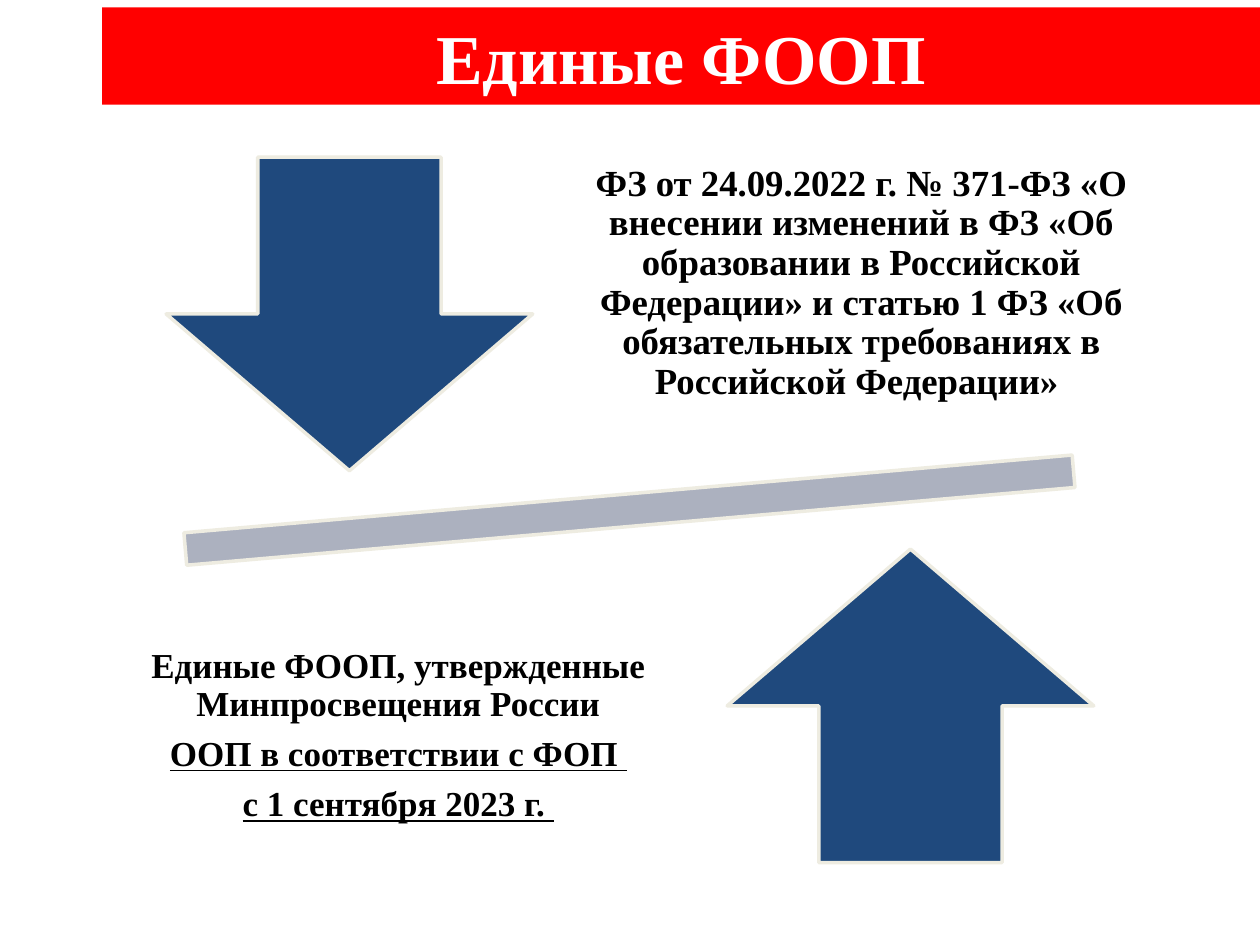
"""Build a slide on the unified programmes with opposing arrows."""
import pptx
import pptx.dml.color
import pptx.enum.shapes
import pptx.enum.text
import pptx.util

Cm = pptx.util.Cm
Pt = pptx.util.Pt
RGBColor = pptx.dml.color.RGBColor
SHAPE = pptx.enum.shapes.MSO_SHAPE
MIDDLE = pptx.enum.text.MSO_ANCHOR.MIDDLE
CENTER = pptx.enum.text.PP_ALIGN.CENTER

RED = RGBColor(0xFF, 0x00, 0x00)
NAVY = RGBColor(0x1F, 0x49, 0x7D)
GREY = RGBColor(0xAC, 0xB1, 0xBF)
CREAM = RGBColor(0xEE, 0xEC, 0xE1)
WHITE = RGBColor(0xFF, 0xFF, 0xFF)
BLACK = RGBColor(0x00, 0x00, 0x00)


def add_shape(kind, box, fill, line=None):
    sp = s.shapes.add_shape(kind, *[Cm(v) for v in box])
    sp.shadow.inherit = False
    sp.fill.solid()
    sp.fill.fore_color.rgb = fill
    if line is None:
        sp.line.fill.background()
    else:
        sp.line.color.rgb = line
        sp.line.width = Pt(2)
    return sp


def format_paragraph(p, size, color):
    p.alignment = CENTER
    for r in p.runs:
        r.font.name = "Times New Roman"
        r.font.size = Pt(size)
        r.font.bold = True
        r.font.color.rgb = color


prs = pptx.Presentation()
prs.slide_width = Cm(25.4)
prs.slide_height = Cm(19.05)
s = prs.slides.add_slide(prs.slide_layouts[6])

title = add_shape(SHAPE.RECTANGLE, (2.06, 0.15, 23.34, 1.96), RED)
title.text_frame.text = "Единые ФООП"
format_paragraph(title.text_frame.paragraphs[0], 40, WHITE)

bar = add_shape(SHAPE.MATH_MINUS, (0.46, 8.89, 24.46, 2.79), GREY, CREAM)
bar.rotation = 355
add_shape(SHAPE.DOWN_ARROW, (3.35, 3.17, 7.39, 6.32), NAVY, CREAM)
add_shape(SHAPE.UP_ARROW, (14.66, 11.07, 7.39, 6.32), NAVY, CREAM)

texts = [
    ((10.67, 2.72, 13.39, 5.99), 21, [
        ("ФЗ от 24.09.2022 г. № 371-ФЗ «О внесении изменений в ФЗ "
         "«Об образовании в Российской Федерации» и статью 1 ФЗ "
         "«Об обязательных требованиях в Российской Федерации» ", False),
    ]),
    ((2.24, 11.81, 11.58, 6.07), 20, [
        ("Единые ФООП, утвержденные Минпросвещения России", False),
        ("ООП в соответствии с ФОП ", True),
        ("с 1 сентября 2023 г. ", True),
    ]),
]
for box, size, lines in texts:
    tf = s.shapes.add_textbox(*[Cm(v) for v in box]).text_frame
    tf.word_wrap = True
    tf.vertical_anchor = MIDDLE
    tf.margin_left = tf.margin_right = Cm(0.41)
    tf.margin_top = tf.margin_bottom = Cm(0.41)
    tf.text = "\n".join(text for text, underlined in lines)
    for p, (text, underlined) in zip(tf.paragraphs, lines):
        format_paragraph(p, size, BLACK)
        p.line_spacing = 0.9
        p.space_after = Pt(0.35 * size)
        p.runs[0].font.underline = underlined

prs.save("out.pptx")
